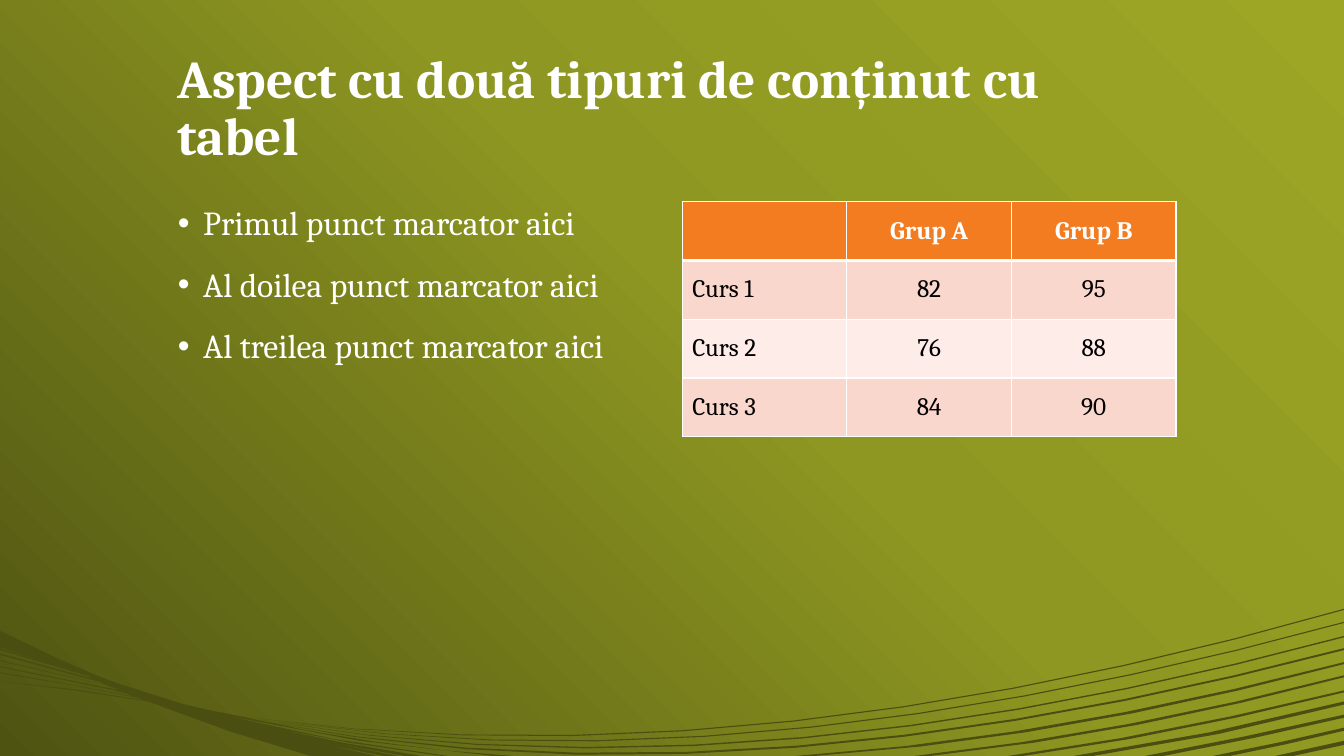
from copy import deepcopy
from dataclasses import dataclass

from lxml import etree
from pptx import Presentation
from pptx.dml.color import RGBColor
from pptx.enum.text import MSO_ANCHOR, MSO_AUTO_SIZE, PP_ALIGN
from pptx.oxml.ns import qn
from pptx.slide import Slide
from pptx.table import _Cell
from pptx.text.text import _Paragraph
from pptx.util import Pt

MIDDLE, BOTTOM = MSO_ANCHOR.MIDDLE, MSO_ANCHOR.BOTTOM
LEFT, CENTER = PP_ALIGN.LEFT, PP_ALIGN.CENTER
FIXED = MSO_AUTO_SIZE.NONE

WHITE = RGBColor(0xFF, 0xFF, 0xFF)
BLACK = RGBColor(0, 0, 0)
ORANGE = RGBColor(0xF3, 0x7B, 0x20)
PINK = RGBColor(0xFA, 0xD7, 0xCD)
PALE = RGBColor(0xFD, 0xEC, 0xE8)
OLIVE = RGBColor(0x4A, 0x4E, 0x11)
FONT = "Cambria"
WIDTH, HEIGHT = 960, 540

STOPS = [
    (0, RGBColor(0x9D, 0xA6, 0x25)),
    (0.45, RGBColor(0x8E, 0x97, 0x21)),
    (1, RGBColor(0x4E, 0x53, 0x12)),
]
TITLE = "Aspect cu două tipuri de conținut cu tabel"
POINTS = ["Primul punct marcator aici", "Al doilea punct marcator aici",
          "Al treilea punct marcator aici"]
GRID = [
    ["", "Grup A", "Grup B"],
    ["Curs 1", "82", "95"],
    ["Curs 2", "76", "88"],
    ["Curs 3", "84", "90"],
]

Dot = tuple[float, float]


@dataclass
class Strand:
    """A thin curve to the right edge; ys are the heights of its control points."""
    left: float
    ys: tuple[float, float, float, float]
    thick: float
    gap: float = 0

    def curve(self, left: float, drop: float) -> list[Dot]:
        a, b, c, d = self.ys
        count = max(2, round((WIDTH - self.left) / 80))
        dots = []
        for i in range(count + 1):
            t = i / count
            u = 1 - t
            y = a * u**3 + 3 * b * u * u * t + 3 * c * u * t * t + d * t**3
            grow = t if self.gap else min(1, 4 * t)
            dots.append((left + (WIDTH - left) * t, y + drop * grow))
        return dots

    def outline(self) -> list[Dot]:
        lower = self.curve(self.left + self.gap, self.thick)
        if not self.gap:
            lower = lower[1:]
        return self.curve(self.left, 0) + lower[::-1]


STRANDS = [
    Strand(172.8, (511.9, 547.2, 509.8, 434.9), 0.8),
    Strand(198.7, (515.5, 550.8, 513.4, 444.2), 0.8),
    Strand(185.8, (514.1, 558, 523.4, 454.3), 1),
    Strand(176.4, (513.4, 563.8, 531.4, 463), 1.4),
    Strand(568.1, (540, 531.4, 506.9, 473), 1.4, 13.7),
    Strand(653, (540, 529.2, 509, 482.4), 1.4, 11.5),
    Strand(720, (540, 529.2, 512.6, 493.2), 1.4, 10.8),
    Strand(766.8, (540, 530.6, 517.7, 501.1), 2.2, 13.7),
    Strand(817.9, (540, 531.4, 521.3, 510.5), 2.2, 13),
    Strand(866.2, (540, 534.2, 527, 519.8), 2.2, 12.2),
    Strand(910.8, (540, 536.4, 532.8, 529.2), 2.9, 13),
]
CREST = [(0, 450.7), (41, 470.2), (54, 475.9), (70.6, 483.1), (84.2, 488.2),
         (129.6, 502.6), (147.6, 506.9), (172.8, 511.9)]
FAN = [(218.4, 521.6), (267.8, 529.8), (317.3, 536), (366.5, 540), (352.8, 540),
       (256.9, 529.2), (157.7, 510.5), (239.1, 528), (319.7, 540),
       (315.4, 540), (251.3, 530.8), (187.9, 518.4), (244.5, 530.4), (301, 540),
       (289.4, 540), (231.1, 529.9), (285.1, 540), (273.6, 540), (223.2, 529.9),
       (210.2, 527), (269.3, 540), (257, 540), (238.3, 535.7), (256.3, 540),
       (221.8, 540), (163.4, 522.2)]
FRINGE = [(105.8, 501.1), (52.1, 493.1), (0, 486.7), (52, 492.2), (104.4, 500.4),
          (97.2, 498.2), (49, 489), (0, 481), (0, 480.2), (48, 488.5), (95.8, 497.5),
          (90, 495.4), (78.5, 492.5), (0, 476.6), (0, 475.9), (86.4, 493.2),
          (76.3, 489.6), (0, 472.3), (0, 471.6), (76.3, 489.6), (72, 487.4),
          (0, 468), (0, 466.6), (65.5, 484.6), (63.4, 483.1), (0, 464.4),
          (0, 463), (39.6, 475.2), (0, 462.2)]


def style(par: _Paragraph, size: float, color: RGBColor, bold: bool = False) -> None:
    for run in par.runs:
        run.font.name = FONT
        run.font.size = Pt(size)
        run.font.bold = bold
        run.font.color.rgb = color


def place(shape, left: float, top: float, width: float, height: float) -> None:
    shape.left, shape.top = Pt(left), Pt(top)
    shape.width, shape.height = Pt(width), Pt(height)


def paint(slide: Slide) -> None:
    """Fill the background with the three-stop gradient."""
    fill = slide.background.fill
    fill.gradient()
    fill.gradient_angle = 225
    stops = slide.element.find(".//" + qn("a:gsLst"))
    stops.insert(1, deepcopy(stops[0]))
    for stop, (pos, color) in zip(fill.gradient_stops, STOPS):
        stop.position = pos
        stop.color.rgb = color


def scale(dots: list[Dot]) -> list[tuple[Pt, Pt]]:
    return [(Pt(x), Pt(y)) for x, y in dots]


def draw_waves(slide: Slide) -> None:
    first, *rest = scale(CREST + FAN + FRINGE)
    pen = slide.shapes.build_freeform(*first, scale=1.0)
    pen.add_line_segments(rest, close=True)
    for strand in STRANDS:
        first, *rest = scale(strand.outline())
        pen.move_to(*first)
        pen.add_line_segments(rest, close=True)
    waves = pen.convert_to_shape()
    waves.shadow.inherit = False
    waves.fill.solid()
    waves.fill.fore_color.rgb = OLIVE
    waves.line.fill.background()
    waves.element.getparent().insert(2, waves.element)


def add_title(slide: Slide) -> None:
    title = slide.shapes.title
    place(title, 119.5, 31.7, 720, 91.4)
    frame = title.text_frame
    frame.text = TITLE
    frame.auto_size = FIXED
    frame.vertical_anchor = BOTTOM
    par = frame.paragraphs[0]
    par.alignment = LEFT
    par.line_spacing = 0.9
    style(par, 38, WHITE, True)


def add_list(slide: Slide) -> None:
    body = slide.placeholders[1]
    place(body, 119.9, 144, 352.8, 329.8)
    frame = body.text_frame
    frame.text = "\n".join(POINTS)
    frame.auto_size = FIXED
    for i, par in enumerate(frame.paragraphs):
        par.line_spacing = 0.9
        par.space_before = Pt(18 if i else 0)
        props = par._p.get_or_add_pPr()
        props.set("marL", str(Pt(18)))
        props.set("indent", str(-Pt(18)))
        tint = etree.SubElement(props, qn("a:buClr"))
        etree.SubElement(tint, qn("a:srgbClr"), val=str(WHITE))
        etree.SubElement(props, qn("a:buFont"), typeface="Arial")
        etree.SubElement(props, qn("a:buChar"), char="•")
        style(par, 24, WHITE)


def rule(cell: _Cell, row: int) -> None:
    """Give a cell white borders, thick below the header."""
    props = cell._tc.get_or_add_tcPr()
    sides = {"L": 1, "R": 1, "T": 3 if row == 1 else 1, "B": 1 if row else 3}
    for side, width in sides.items():
        line = etree.SubElement(props, qn("a:ln" + side), w=str(Pt(width)))
        solid = etree.SubElement(line, qn("a:solidFill"))
        etree.SubElement(solid, qn("a:srgbClr"), val=str(WHITE))


def add_grid(slide: Slide) -> None:
    rows, cols = len(GRID), len(GRID[0])
    table = slide.shapes.add_table(
        rows, cols, Pt(487.3), Pt(144), Pt(352.8), Pt(42 * rows)).table
    for r, texts in enumerate(GRID):
        for c, text in enumerate(texts):
            cell = table.cell(r, c)
            rule(cell, r)
            cell.fill.solid()
            cell.fill.fore_color.rgb = (PINK if r % 2 else PALE) if r else ORANGE
            cell.vertical_anchor = MIDDLE
            cell.text_frame.text = text
            par = cell.text_frame.paragraphs[0]
            par.alignment = CENTER if c else LEFT
            style(par, 18, BLACK if r else WHITE, not r)


def main() -> None:
    deck = Presentation()
    deck.slide_width, deck.slide_height = Pt(WIDTH), Pt(HEIGHT)
    slide = deck.slides.add_slide(deck.slide_layouts[1])
    paint(slide)
    draw_waves(slide)
    add_title(slide)
    add_list(slide)
    add_grid(slide)
    deck.save("out.pptx")


if __name__ == "__main__":
    main()
